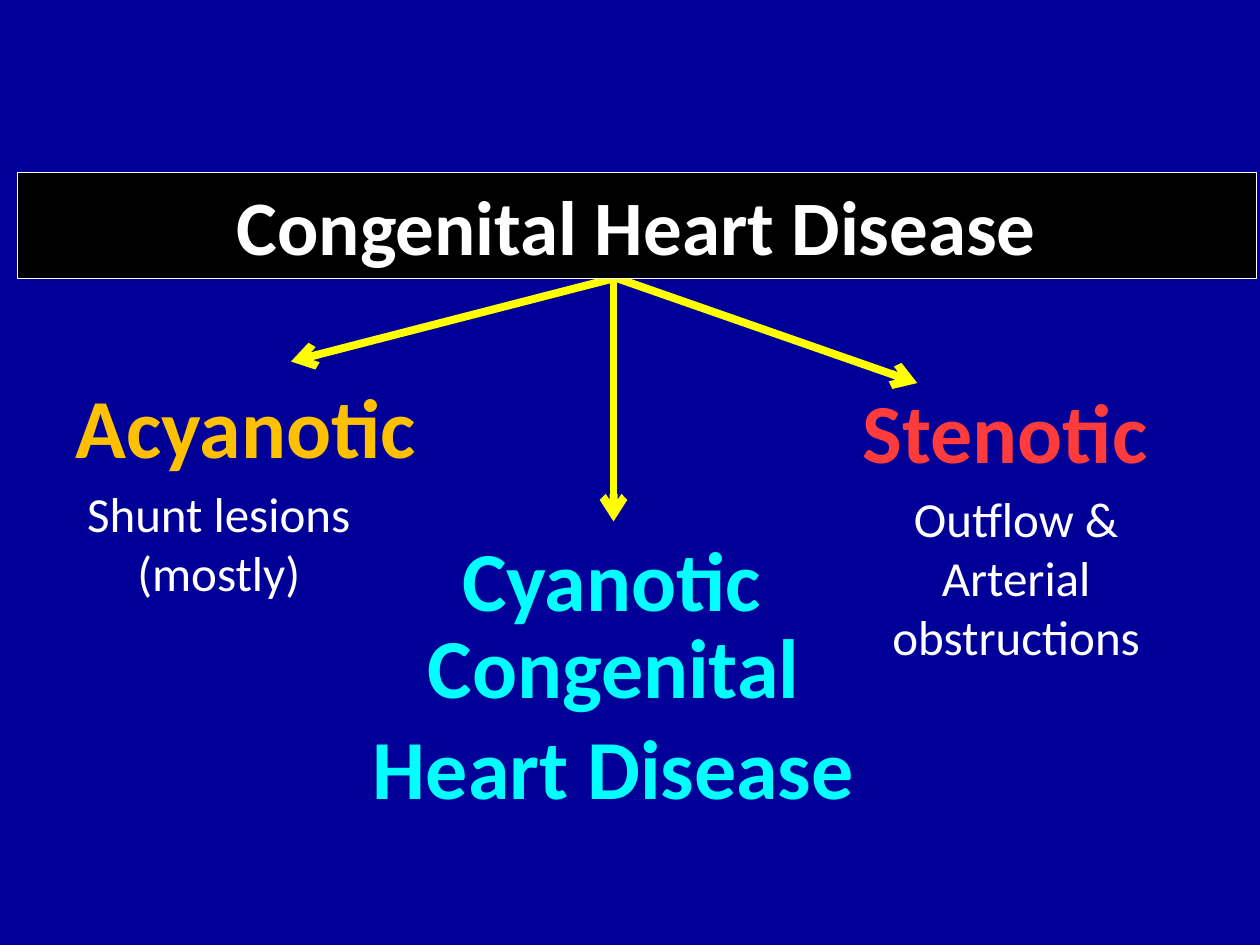
from lxml import etree
from pptx import Presentation
from pptx.dml.color import RGBColor
from pptx.enum.shapes import MSO_CONNECTOR, MSO_SHAPE
from pptx.enum.text import MSO_ANCHOR, MSO_AUTO_SIZE, PP_ALIGN
from pptx.oxml.ns import qn
from pptx.util import Pt

LEFT, MID = PP_ALIGN.LEFT, PP_ALIGN.CENTER
FONT = "Calibri"
NAVY = RGBColor(0x00, 0x00, 0x99)
BLACK = RGBColor(0x00, 0x00, 0x00)
WHITE = RGBColor(0xFF, 0xFF, 0xFF)
YELLOW = RGBColor(0xFF, 0xFF, 0x00)
CYAN = RGBColor(0x00, 0xFF, 0xFF)
AMBER = RGBColor(0xFF, 0xC0, 0x00)
RED = RGBColor(0xFF, 0x3B, 0x3B)

TITLE = "Congenital Heart Disease"
BAR = (10, 98.6, 708, 60.5)  # left, top, width, height
BASE = BAR[1] + BAR[3]

# start x, then tip x and y; all arrows leave the foot of the title bar
ARROWS = [(350.6, 350.6, 298), (350.6, 166.3, 206.6), (352.8, 524.2, 218.9)]

# lines, box, alignment, colour
HEADS = [
    (["Cyanotic"], (257, 298, 187.2, 65.5), LEFT, CYAN),
    (["Congenital", "Heart Disease"], (204.5, 347.8, 292.3, 123.8), MID, CYAN),
    (["Acyanotic"], (36, 210.2, 211.7, 65.5), LEFT, AMBER),
    (["Stenotic"], (486, 213.1, 179.3, 65.5), LEFT, RED),
]
NOTES = [
    (["Shunt lesions", "(mostly)"], (38.2, 272.9, 173.5, 74.9), MID, WHITE),
    (["Outflow &", "Arterial", "obstructions"], (501.8, 275.8, 157.7, 108.7), MID, WHITE),
]


def write(shape, lines, align, color, size, bold):
    frame = shape.text_frame
    frame.auto_size = MSO_AUTO_SIZE.NONE
    for i, line in enumerate(lines):
        para = frame.add_paragraph() if i else frame.paragraphs[0]
        para.alignment = align
        run = para.add_run()
        run.text = line
        font = run.font
        font.name, font.size, font.bold = FONT, Pt(size), bold
        font.color.rgb = color


def add_label(shapes, lines, box, align, color, size, bold):
    label = shapes.add_textbox(*map(Pt, box))
    label.text_frame.word_wrap = False
    write(label, lines, align, color, size, bold)


def add_arrow(shapes, *ends):
    arrow = shapes.add_connector(MSO_CONNECTOR.STRAIGHT, *map(Pt, ends))
    arrow.line.color.rgb = YELLOW
    arrow.line.width = Pt(4.5)
    etree.SubElement(arrow.line._get_or_add_ln(), qn("a:tailEnd"), type="arrow")
    etree.SubElement(arrow._element.spPr, qn("a:effectLst"))


def add_title(shapes):
    bar = shapes.add_shape(MSO_SHAPE.RECTANGLE, *map(Pt, BAR))
    bar.shadow.inherit = False
    bar.fill.solid()
    bar.fill.fore_color.rgb = BLACK
    bar.line.color.rgb = WHITE
    bar.line.width = Pt(0.75)
    bar.text_frame.vertical_anchor = MSO_ANCHOR.TOP
    write(bar, [TITLE], MID, WHITE, 44, True)


def main():
    deck = Presentation()
    deck.slide_width, deck.slide_height = Pt(720), Pt(540)
    slide = deck.slides.add_slide(deck.slide_layouts[6])
    slide.background.fill.solid()
    slide.background.fill.fore_color.rgb = NAVY
    shapes = slide.shapes
    for start, tip, low in ARROWS:
        add_arrow(shapes, start, BASE, tip, low)
    for head in HEADS:
        add_label(shapes, *head, 48, True)
    for note in NOTES:
        add_label(shapes, *note, 28, False)
    add_title(shapes)
    deck.save("out.pptx")


if __name__ == "__main__":
    main()
